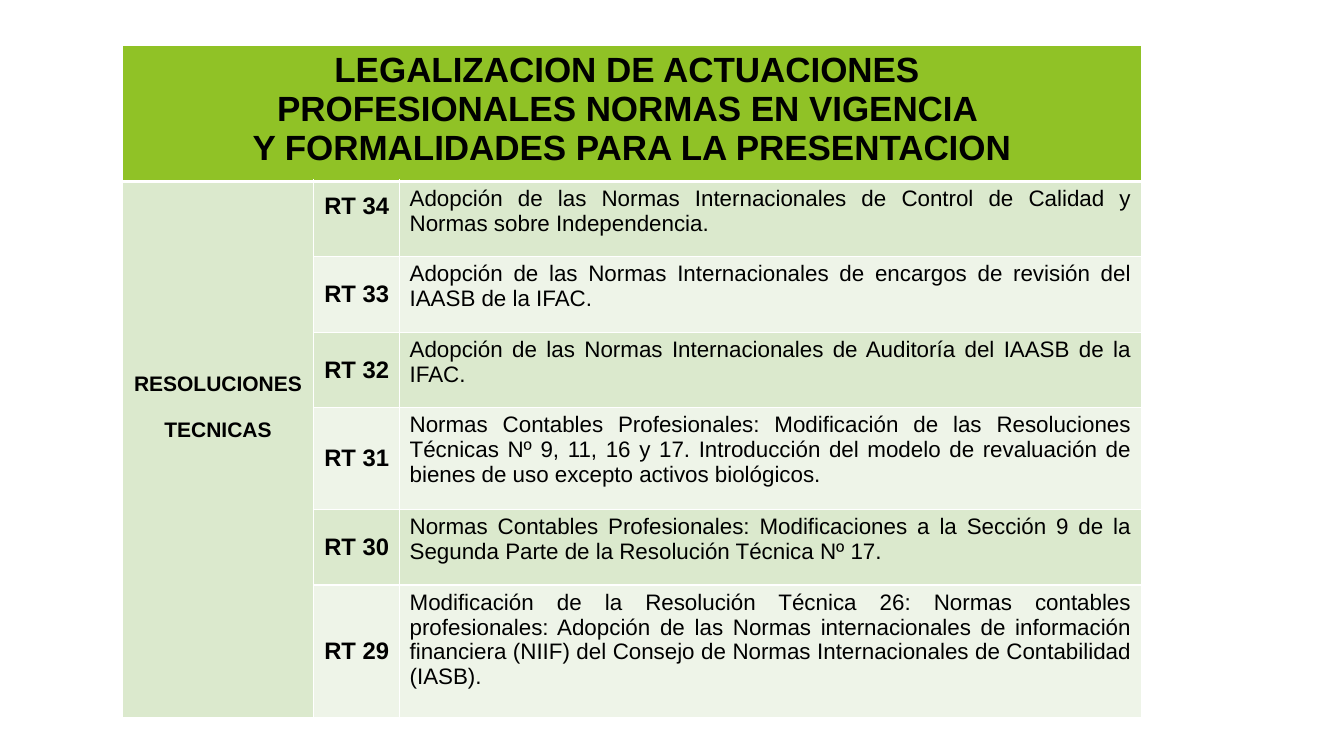
from pptx import Presentation
from pptx.dml.color import RGBColor
from pptx.enum.text import MSO_ANCHOR, PP_ALIGN
from pptx.oxml import parse_xml
from pptx.oxml.ns import nsdecls
from pptx.util import Cm, Pt

CENTER, JUSTIFY = PP_ALIGN.CENTER, PP_ALIGN.JUSTIFY
TOP, MIDDLE = MSO_ANCHOR.TOP, MSO_ANCHOR.MIDDLE

BLACK = RGBColor(0x00, 0x00, 0x00)
WHITE = RGBColor(0xFF, 0xFF, 0xFF)
GREEN = RGBColor(0x90, 0xC2, 0x26)
BAND_DARK = RGBColor(0xDB, 0xE9, 0xCD)
BAND_LIGHT = RGBColor(0xEE, 0xF4, 0xE8)

HEADING = [
    "LEGALIZACION DE ACTUACIONES ",
    "PROFESIONALES NORMAS EN VIGENCIA ",
    "Y FORMALIDADES PARA LA PRESENTACION",
]
RESOLUTIONS = [
    ("RT 34", "Adopción de las Normas Internacionales de Control de Calidad y "
              "Normas sobre Independencia.", 1.9),
    ("RT 33", "Adopción de las Normas Internacionales de encargos de revisión "
              "del IAASB de la IFAC.", 1.9),
    ("RT 32", "Adopción de las Normas Internacionales de Auditoría del IAASB "
              "de la IFAC.", 1.9),
    ("RT 31", "Normas Contables Profesionales: Modificación de las Resoluciones "
              "Técnicas Nº 9, 11, 16 y 17. Introducción del modelo de revaluación "
              "de bienes de uso excepto activos biológicos.", 2.57),
    ("RT 30", "Normas Contables Profesionales: Modificaciones a la Sección 9 de "
              "la Segunda Parte de la Resolución Técnica Nº 17.", 1.9),
    ("RT 29", "Modificación de la Resolución Técnica 26: Normas contables "
              "profesionales: Adopción de las Normas internacionales de "
              "información financiera (NIIF) del Consejo de Normas "
              "Internacionales de Contabilidad (IASB).", 3.35),
]


def write_text(frame, lines, size, bold=False, align=CENTER, gap=0):
    for index, line in enumerate(lines):
        para = frame.paragraphs[0] if index == 0 else frame.add_paragraph()
        para.alignment = align
        if index and gap:
            para.space_before = Pt(gap)
        span = para.add_run()
        span.text = line
        span.font.name = "Arial"
        span.font.size = Pt(size)
        span.font.bold = bold
        span.font.color.rgb = BLACK


class SlideBuilder:
    def __init__(self, deck):
        self.page = deck.slides.add_slide(deck.slide_layouts[6])
        self.border_color = WHITE

    def add_table(self, left, top, widths, heights):
        frame = self.page.shapes.add_table(
            len(heights), len(widths), Cm(left), Cm(top),
            Cm(sum(widths)), Cm(sum(heights)))
        table = frame.table
        table.horz_banding = False
        for column, width in zip(table.columns, widths):
            column.width = Cm(width)
        for row, height in zip(table.rows, heights):
            row.height = Cm(height)
        return table

    def style_cell(self, cell, fill, top_line=1, bottom_line=1):
        properties = cell._tc.get_or_add_tcPr()
        weights = {"lnL": 1, "lnR": 1, "lnT": top_line, "lnB": bottom_line}
        for side, weight in weights.items():
            properties.append(parse_xml(
                f'<a:{side} {nsdecls("a")} w="{Pt(weight)}"><a:solidFill>'
                f'<a:srgbClr val="{self.border_color}"/></a:solidFill></a:{side}>'))
        cell.fill.solid()
        cell.fill.fore_color.rgb = fill

    def fill_cell(self, cell, lines, size, anchor=TOP, bottom=0.13, **text_format):
        cell.vertical_anchor = anchor
        cell.margin_bottom = Cm(bottom)
        write_text(cell.text_frame, lines, size, **text_format)


def main():
    deck = Presentation()
    deck.slide_width, deck.slide_height = Cm(33.87), Cm(19.05)
    builder = SlideBuilder(deck)

    heights = [3.42] + [height for _, _, height in RESOLUTIONS]
    table = builder.add_table(3.08, 1.15, [4.83, 2.16, 18.69], heights)
    last_row = len(RESOLUTIONS)
    table.cell(0, 0).merge(table.cell(0, 2))
    table.cell(1, 0).merge(table.cell(last_row, 0))

    for column in range(3):
        builder.style_cell(table.cell(0, column), GREEN, bottom_line=3)
    builder.fill_cell(table.cell(0, 0), HEADING, 25, bold=True)

    for row, (code, description, _) in enumerate(RESOLUTIONS, 1):
        band = BAND_DARK if row % 2 else BAND_LIGHT
        top_line = 3 if row == 1 else 1
        for column, fill in enumerate([BAND_DARK, band, band]):
            builder.style_cell(table.cell(row, column), fill, top_line)
        builder.fill_cell(table.cell(row, 1), [code], 17, anchor=MIDDLE,
                          bottom=0.8 if row == 1 else 0.13, bold=True)
        builder.fill_cell(table.cell(row, 2), [description], 16, align=JUSTIFY)

    builder.fill_cell(table.cell(1, 0), ["RESOLUCIONES", "TECNICAS"], 15,
                      anchor=MIDDLE, bottom=2.25, bold=True, gap=16)
    deck.save("out.pptx")


if __name__ == "__main__":
    main()
